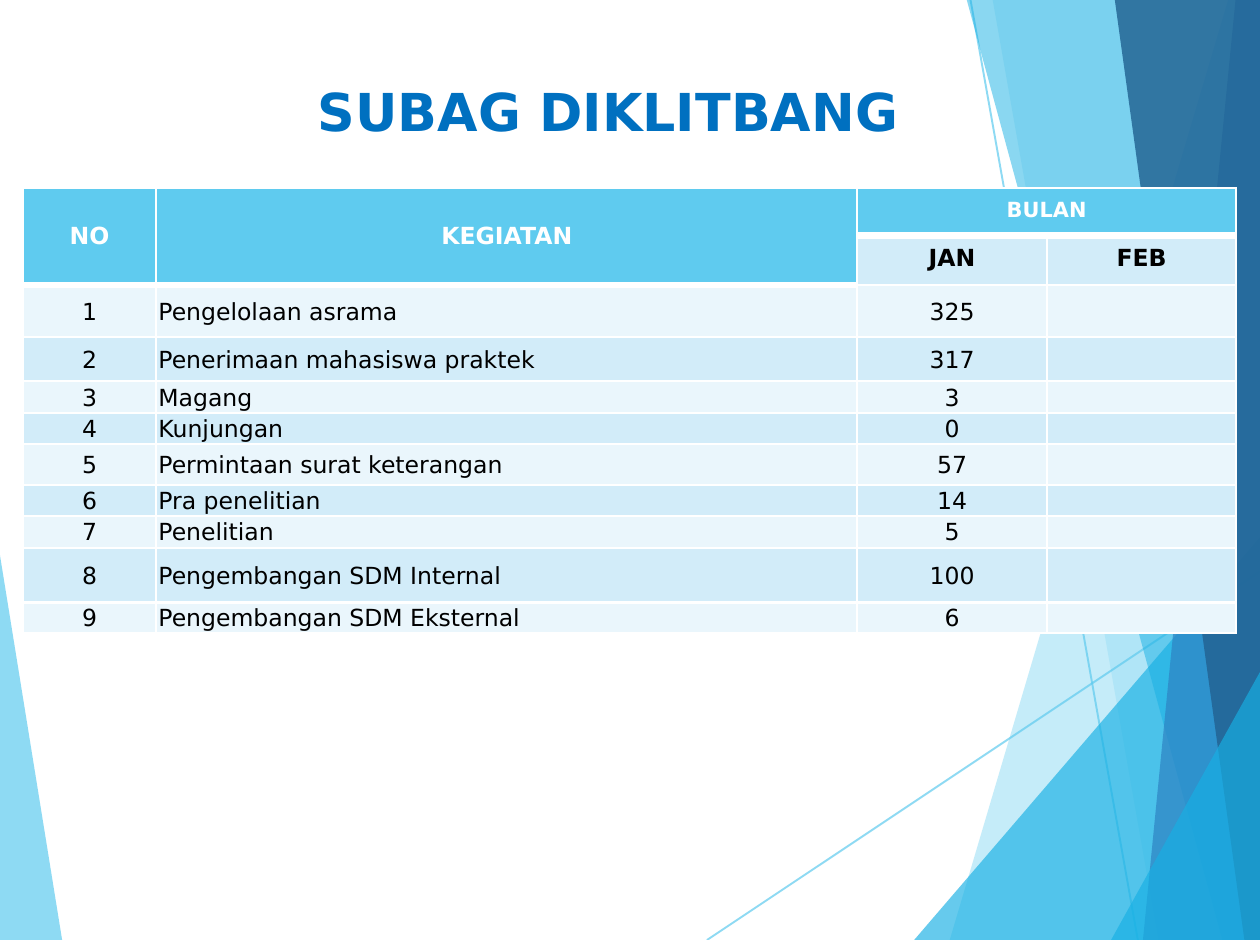
from dataclasses import dataclass

from lxml.etree import SubElement
from pptx import Presentation
from pptx.dml.color import RGBColor
from pptx.enum.shapes import MSO_CONNECTOR
from pptx.enum.text import MSO_ANCHOR as Anchor, PP_ALIGN as Align
from pptx.oxml.ns import qn
from pptx.util import Cm, Pt


@dataclass(frozen=True)
class Theme:
    """Colours, font and type sizes of the slide."""
    sky: str = "5FCBEF"
    cyan: str = "17B0E4"
    blue: str = "2E83C3"
    navy: str = "226292"
    title: str = "0070C0"
    white: str = "FFFFFF"
    black: str = "000000"
    band_dark: str = "D2ECF9"
    band_light: str = "EAF6FC"
    font: str = "DejaVu Sans"
    title_size: float = 20
    text_size: float = 9
    month_size: float = 8


THEME = Theme()
WIDTH, HEIGHT = 17.02, 12.7
ACTIVITIES = [
    ("Pengelolaan asrama", "325"),
    ("Penerimaan mahasiswa praktek", "317"),
    ("Magang", "3"),
    ("Kunjungan", "0"),
    ("Permintaan surat keterangan", "57"),
    ("Pra penelitian", "14"),
    ("Penelitian", "5"),
    ("Pengembangan SDM Internal", "100"),
    ("Pengembangan SDM Eksternal", "6"),
]
COLUMN_WIDTHS = [1.8, 9.47, 2.56, 2.56]
ROW_HEIGHTS = [0.64, 0.67, 0.7, 0.6, 0.43, 0.42, 0.55, 0.42, 0.43, 0.74, 0.41]
HEADER_INSETS = dict(margin_left=Cm(0.25), margin_right=Cm(0.25),
                     margin_top=Cm(0.13), margin_bottom=Cm(0.13))
BODY_INSETS = dict(margin_left=Cm(0.03), margin_right=Cm(0.03),
                   margin_top=Cm(0.03), margin_bottom=0)


def set_formats(target, formats):
    """Set each named format value on the target."""
    for name, value in formats.items():
        setattr(target, name, value)


def set_alpha(element, percent):
    """Make the solid colour inside an element partly transparent."""
    colour = next(element.iter(qn("a:srgbClr")))
    SubElement(colour, qn("a:alpha"), val=str(percent * 1000))


def write(paragraph, text, size, colour, bold, align):
    """Write one formatted run, or size the paragraph when it is empty."""
    paragraph.alignment = align
    if not text:
        SubElement(paragraph._p, qn("a:endParaRPr"), sz=str(int(size * 100)))
        return
    run = paragraph.add_run()
    run.text = text
    set_formats(run.font, dict(name=THEME.font, size=Pt(size), bold=bold))
    run.font.color.rgb = RGBColor.from_string(colour)


def add_facet(slide, points, colour, alpha):
    """Draw a translucent polygon through the points."""
    start, *rest = [(Cm(x), Cm(y)) for x, y in points]
    builder = slide.shapes.build_freeform(*start)
    builder.add_line_segments(rest, close=True)
    facet = builder.convert_to_shape()
    facet.shadow.inherit = False
    facet.fill.solid()
    facet.fill.fore_color.rgb = RGBColor.from_string(colour)
    set_alpha(facet.fill._xPr.find(qn("a:solidFill")), alpha)
    facet.line.fill.background()


def add_ray(slide, start, end):
    """Draw a thin translucent line."""
    ray = slide.shapes.add_connector(
        MSO_CONNECTOR.STRAIGHT, *[Cm(value) for value in (*start, *end)])
    ray.line.width = Pt(0.75)
    ray.line.color.rgb = RGBColor.from_string(THEME.sky)
    properties = ray._element.spPr
    set_alpha(properties, 70)
    SubElement(properties, qn("a:effectLst"))


def add_backdrop(slide, left, top, width, height):
    """Draw the facets and rays along the edges of the box."""
    right, bottom = left + width, top + height

    def strip(upper, lower, colour, alpha):
        """Fill from a slanted edge to the right side."""
        add_facet(slide, [(left + upper, top), (left + lower, bottom),
                          (right, bottom), (right, top)], colour, alpha)

    def wedge(foot, peak, colour, alpha):
        """Fill the lower right corner with a triangle."""
        add_facet(slide, [(left + foot, bottom), (right, top + peak),
                          (right, bottom)], colour, alpha)

    add_facet(slide, [(left, top + 7.5), (left + 0.84, bottom), (left, bottom)],
              THEME.sky, 70)
    add_ray(slide, (left + 9.55, bottom), (right, top + 7.72))
    add_ray(slide, (left + 13.11, top), (left + 15.37, bottom))
    strip(16.59, 12.83, THEME.sky, 36)
    strip(13.41, 15.65, THEME.sky, 20)
    wedge(12.35, 7.26, THEME.cyan, 66)
    strip(13.06, 16.51, THEME.cyan, 50)
    strip(16.69, 15.44, THEME.blue, 70)
    strip(15.06, 16.81, THEME.navy, 82)
    wedge(15.01, 9.08, THEME.cyan, 66)


def add_title(slide, left, top, width, height):
    """Write the centred heading."""
    heading = slide.shapes.add_textbox(Cm(left), Cm(top), Cm(width), Cm(height))
    frame = heading.text_frame
    set_formats(frame, dict(word_wrap=True, vertical_anchor=Anchor.TOP))
    write(frame.paragraphs[0], "SUBAG DIKLITBANG", THEME.title_size,
          THEME.title, True, Align.CENTER)


def is_header(row, column):
    """Tell whether a cell belongs to the filled heading."""
    return row == 0 or (row == 1 and column < 2)


def add_borders(cell, row, column):
    """Rule a cell in white, thicker under the heading."""
    below_header = row > 0 and is_header(row - 1, column)
    widths = dict(lnL=1, lnR=1, lnT=3 if below_header else 1,
                  lnB=3 if is_header(row, column) else 1)
    properties = cell._tc.get_or_add_tcPr()
    for side, width in widths.items():
        border = SubElement(properties, qn(f"a:{side}"), w=str(Pt(width)))
        fill = SubElement(border, qn("a:solidFill"))
        SubElement(fill, qn("a:srgbClr"), val=THEME.white)


def style_cell(cell, row, column):
    """Give a cell its borders, fill, insets and anchor."""
    add_borders(cell, row, column)
    band = THEME.band_dark if row % 2 else THEME.band_light
    cell.fill.solid()
    cell.fill.fore_color.rgb = RGBColor.from_string(
        THEME.sky if is_header(row, column) else band)
    set_formats(cell, HEADER_INSETS if row < 2 else BODY_INSETS)
    top_anchored = row < 2 and column > 1
    cell.vertical_anchor = Anchor.TOP if top_anchored else Anchor.MIDDLE


def add_activity_table(slide, left, top, width, height):
    """Tabulate the activities by month."""
    rows = [("NO", "KEGIATAN", "BULAN", ""), ("", "", "JAN", "FEB")]
    rows += [(str(number), activity, january, "")
             for number, (activity, january) in enumerate(ACTIVITIES, 1)]
    table = slide.shapes.add_table(len(rows), len(COLUMN_WIDTHS), Cm(left),
                                   Cm(top), Cm(width), Cm(height)).table
    set_formats(table, dict(first_row=False, horz_banding=False))
    for column, column_width in zip(table.columns, COLUMN_WIDTHS):
        column.width = Cm(column_width)
    for table_row, row_height in zip(table.rows, ROW_HEIGHTS):
        table_row.height = Cm(row_height)
    for row, texts in enumerate(rows):
        for column, text in enumerate(texts):
            cell = table.cell(row, column)
            style_cell(cell, row, column)
            size = THEME.month_size if text == "BULAN" else THEME.text_size
            colour = THEME.white if is_header(row, column) else THEME.black
            align = Align.LEFT if row > 1 and column == 1 else Align.CENTER
            write(cell.text_frame.paragraphs[0], text, size, colour, row < 2, align)
    for first, last in [((0, 0), (1, 0)), ((0, 1), (1, 1)), ((0, 2), (0, 3))]:
        table.cell(*first).merge(table.cell(*last))


def main():
    """Build and save the slide."""
    deck = Presentation()
    set_formats(deck, dict(slide_width=Cm(WIDTH), slide_height=Cm(HEIGHT)))
    slide = deck.slides.add_slide(deck.slide_layouts[6])
    add_backdrop(slide, 0, 0, WIDTH, HEIGHT)
    add_title(slide, 2.31, 0.95, 11.81, 2.44)
    add_activity_table(slide, 0.31, 2.54, sum(COLUMN_WIDTHS), sum(ROW_HEIGHTS))
    deck.save("out.pptx")


if __name__ == "__main__":
    main()
